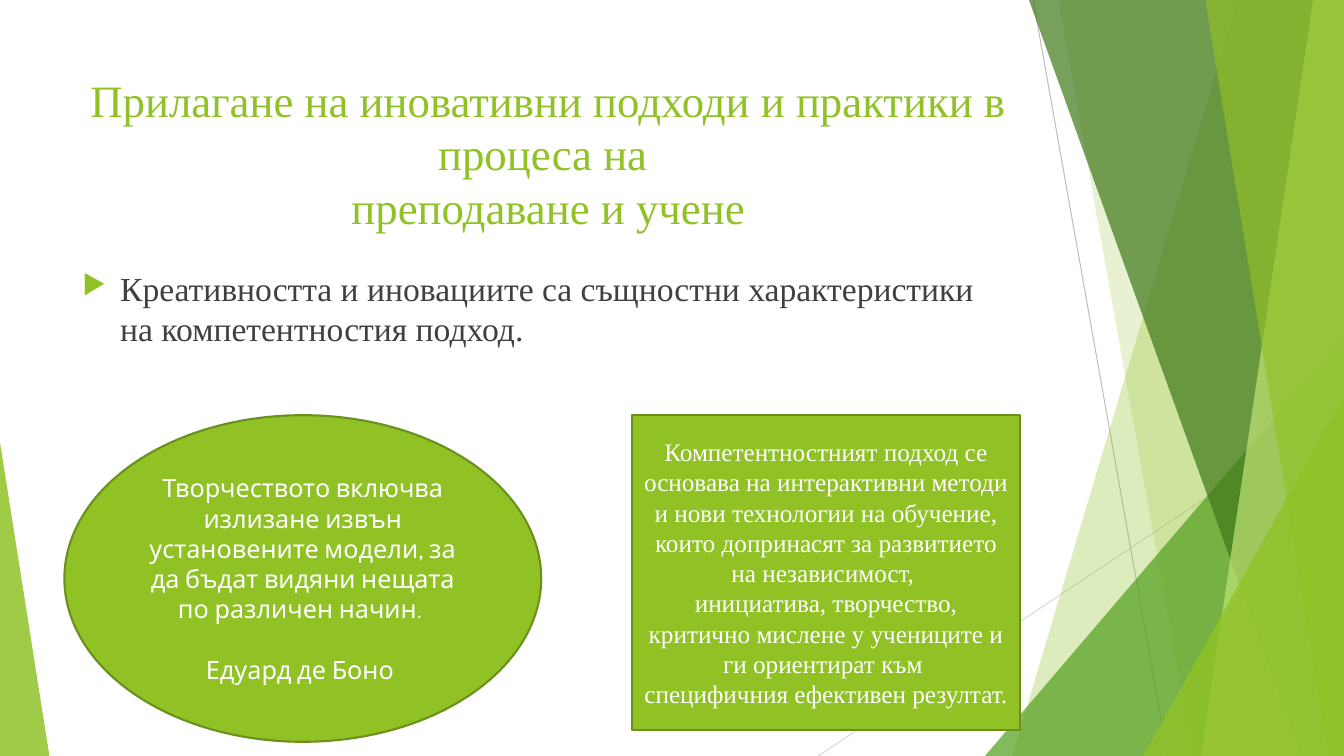
import pptx
import pptx.util
import pptx.dml.color
import pptx.enum.shapes
import pptx.enum.text
import pptx.oxml.ns
import lxml.etree

Pt = pptx.util.Pt
RGB = pptx.dml.color.RGBColor.from_string
MSO = pptx.enum.shapes.MSO_SHAPE
ALIGN = pptx.enum.text.PP_ALIGN
ANCHOR = pptx.enum.text.MSO_ANCHOR
qn = pptx.oxml.ns.qn


class Theme:
    green, leaf, forest, lime = "90C226", "54A021", "3F7819", "C0E474"
    edge, ink, white = "6B901C", "404040", "FFFFFF"
    grey, pale = "BFBFBF", "D9D9D9"
    serif, sans = "Times New Roman", "Cabin"
    head, body, note = 32, 24, 18


def paint(shape, color, alpha=100):
    shape.shadow.inherit = False
    shape.fill.solid()
    shape.fill.fore_color.rgb = RGB(color)
    shape.line.fill.background()
    if alpha < 100:
        tone = shape._element.spPr.find(".//" + qn("a:srgbClr"))
        lxml.etree.SubElement(tone, qn("a:alpha"), val=str(alpha * 1000))


def write(shape, texts, font, color, para, anchor=ANCHOR.TOP):
    frame = shape.text_frame
    frame.word_wrap = True
    frame.vertical_anchor = anchor
    for i, text in enumerate(texts):
        item = frame.paragraphs[0] if i == 0 else frame.add_paragraph()
        item.text = text
        for key, value in para.items():
            setattr(item, key, value)
        for run in item.runs:
            for key, value in font.items():
                setattr(run.font, key, value)
            run.font.color.rgb = RGB(color)
    return frame.paragraphs


deck = pptx.Presentation()
deck.slide_width, deck.slide_height = Pt(960), Pt(540)
slide = deck.slides.add_slide(deck.slide_layouts[6])
shapes = slide.shapes

# Thin lines behind the facets
for x1, y1, x2, y2, color in [
    (738, 0, 834, 540, Theme.grey),
    (960, 290, 584.5, 540, Theme.pale),
]:
    line = shapes.add_connector(
        pptx.enum.shapes.MSO_CONNECTOR.STRAIGHT, Pt(x1), Pt(y1), Pt(x2), Pt(y2))
    line.line.color.rgb = RGB(color)
    line.line.width = Pt(0.75)
    lxml.etree.SubElement(line._element.spPr, qn("a:effectLst"))

# Facets: bands (top x, bottom x) reach the right edge,
# triangles (left, top, width, apex) stand on the bottom edge
for kind, place, color, alpha in [
    ("band", (884, 723), Theme.green, 30),
    ("band", (756, 852), Theme.green, 20),
    ("tri", (703.5, 240, 256.5, 1), Theme.leaf, 72),
    ("band", (735, 929.5), Theme.forest, 70),
    ("band", (938, 858), Theme.lime, 70),
    ("band", (861, 949), Theme.green, 65),
    ("tri", (816.5, 283, 143.5, 1), Theme.green, 80),
    ("tri", (0, 316, 35.3, 0), Theme.green, 85),
]:
    if kind == "band":
        top, foot = place
        path = shapes.build_freeform(Pt(top), 0)
        path.add_line_segments(
            [(Pt(960), 0), (Pt(960), Pt(540)), (Pt(foot), Pt(540))], close=True)
        facet = path.convert_to_shape()
    else:
        left, top, width, apex = place
        facet = shapes.add_shape(
            MSO.ISOSCELES_TRIANGLE, Pt(left), Pt(top), Pt(width), Pt(540 - top))
        facet.adjustments[0] = apex
    paint(facet, color, alpha)

# Title
title = shapes.add_textbox(Pt(53.3), Pt(48.2), Pt(676.8), Pt(103.7))
write(title,
      ["Прилагане на иновативни подходи и практики в процеса на \vпреподаване и учене"],
      {"name": Theme.serif, "size": Pt(Theme.head)}, Theme.green,
      {"alignment": ALIGN.CENTER})

# Bullet point
point = shapes.add_textbox(Pt(51.8), Pt(187.9), Pt(676.8), Pt(305.3))
lead = write(point,
             ["Креативността и иновациите са същностни характеристики на компетентностия подход."],
             {"name": Theme.serif, "size": Pt(Theme.body)}, Theme.ink,
             {"alignment": ALIGN.LEFT, "space_before": Pt(10)})[0]
props = lead._p.get_or_add_pPr()
props.set("marL", str(Pt(27)))
props.set("indent", str(-Pt(27)))
tint = lxml.etree.SubElement(props, qn("a:buClr"))
lxml.etree.SubElement(tint, qn("a:srgbClr"), val=Theme.green)
lxml.etree.SubElement(props, qn("a:buSzPct"), val="80000")
lxml.etree.SubElement(props, qn("a:buChar"), char="▶")

# Quote and summary
for form, box, face, texts, gap in [
    (MSO.OVAL, (46, 296.6, 340.6, 233.3), Theme.sans,
     ["Творчеството включва излизане извън установените модели, "
      "за да бъдат видяни нещата по различен начин. ",
      "Едуард де Боно "], 21.6),
    (MSO.RECTANGLE, (451.4, 296.6, 277.2, 224.6), Theme.serif,
     ["Компетентностният подход се основава на интерактивни методи и нови "
      "технологии на обучение, които допринасят за развитието на независимост, ",
      "инициатива, творчество, критично мислене у учениците и ги ориентират към ",
      "специфичния ефективен резултат. "], 0),
]:
    card = shapes.add_shape(form, *map(Pt, box))
    paint(card, Theme.green)
    card.line.color.rgb = RGB(Theme.edge)
    card.line.width = Pt(1.5)
    rows = write(card, texts, {"name": face, "size": Pt(Theme.note)}, Theme.white,
                 {"alignment": ALIGN.CENTER}, ANCHOR.MIDDLE)
    rows[-1].space_before = Pt(gap)

deck.save("out.pptx")
